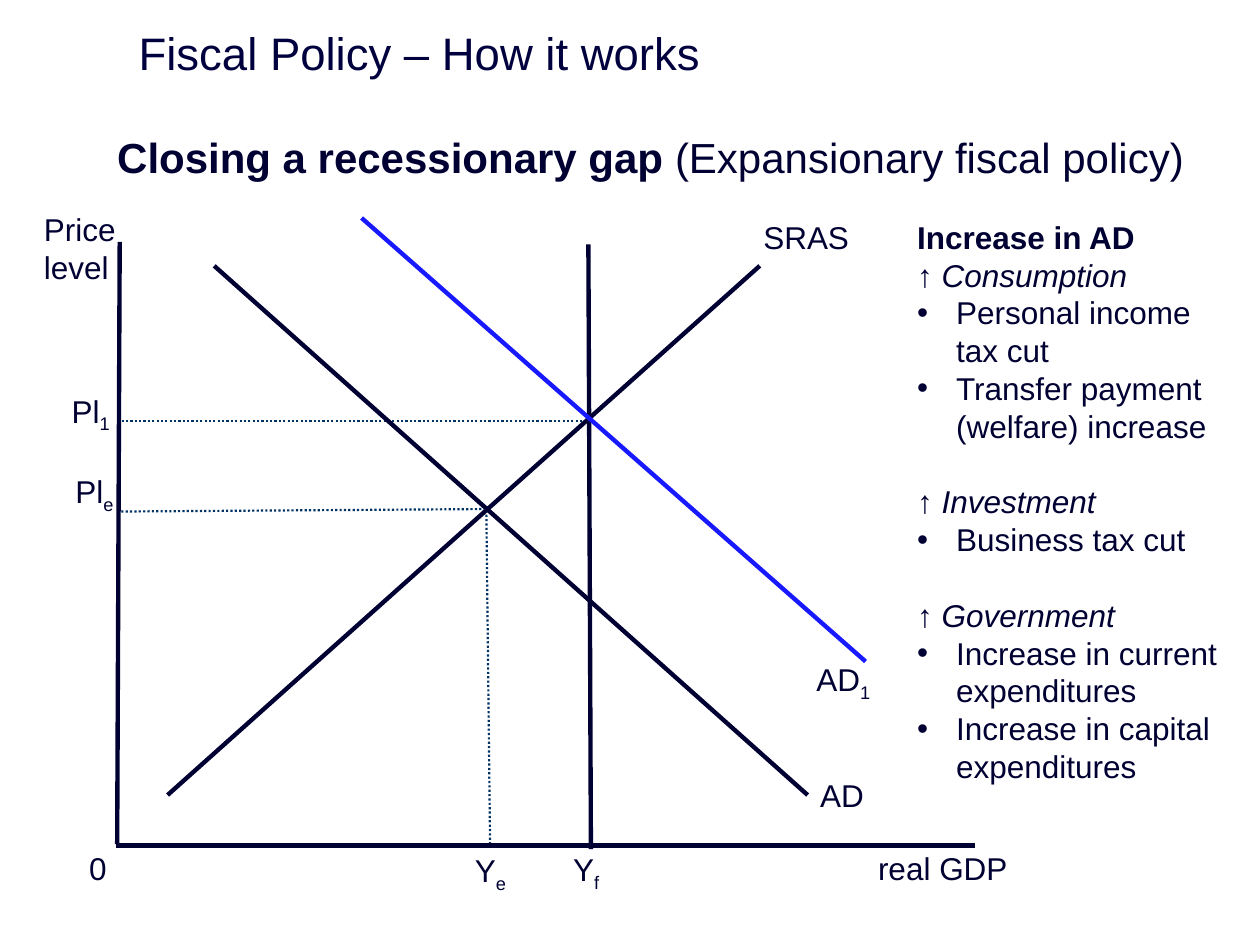
from pptx import Presentation
from pptx.dml.color import RGBColor
from pptx.enum.dml import MSO_LINE
from pptx.enum.shapes import MSO_CONNECTOR
from pptx.enum.text import MSO_ANCHOR, MSO_AUTO_SIZE, PP_ALIGN
from pptx.oxml.ns import qn
from pptx.util import Inches, Pt
from lxml import etree

STRAIGHT = MSO_CONNECTOR.STRAIGHT
DOT = MSO_LINE.ROUND_DOT
LEFT = PP_ALIGN.LEFT
TOP, MIDDLE = MSO_ANCHOR.TOP, MSO_ANCHOR.MIDDLE
FIXED, GROW = MSO_AUTO_SIZE.NONE, MSO_AUTO_SIZE.SHAPE_TO_FIT_TEXT

INK, TITLE_INK, GUIDE, SHIFT = "000032", "00003E", "003264", "1919FF"
LINE_PITCH = 1.2
LABEL_SIZE = 18

CURVES = [
    ((0.95, 1.92), (0.93, 6.7), INK),
    ((7.74, 6.71), (0.92, 6.71), INK),
    ((6.03, 2.11), (1.33, 6.31), INK),
    ((1.7, 2.11), (6.41, 6.31), INK),
    ((4.67, 1.94), (4.69, 6.74), INK),
    ((2.87, 1.73), (6.87, 5.25), SHIFT),
]
GUIDES = [
    ((3.89, 4.04), (0.95, 4.06)),
    ((3.86, 4.05), (3.89, 6.72)),
    ((4.69, 3.34), (0.96, 3.34)),
]
LABELS = [
    ("real GDP", "", (6.87, 6.69, 1.29, 0.4)),
    ("0", "", (0.61, 6.69, 0.64, 0.4)),
    ("SRAS", "", (5.96, 1.68, 0.9, 0.4)),
    ("AD", "", (6.41, 6.11, 0.81, 0.4)),
    ("AD", "1", (6.38, 5.23, 0.81, 0.4)),
    ("Pl", "1", (0.47, 3.1, 0.75, 0.4)),
    ("Pl", "e", (0.5, 3.74, 0.75, 0.4)),
    ("Y", "e", (3.67, 6.75, 0.55, 0.4)),
    ("Y", "f", (4.45, 6.74, 0.44, 0.4)),
]
MEASURES = [
    ("Consumption", ["Personal income tax cut", "Transfer payment (welfare) increase"]),
    ("Investment", ["Business tax cut"]),
    ("Government", ["Increase in current expenditures", "Increase in capital expenditures"]),
]


def rgb(value):
    """Turn a hex string into a colour."""
    return RGBColor.from_string(value)


def set_all(target, values):
    """Set every attribute named in a dict."""
    for name, value in values.items():
        setattr(target, name, value)


def add_run(p, text, size=LABEL_SIZE, color=INK, subscript=False, **style):
    """Append a formatted run to a paragraph."""
    r = p.add_run()
    r.text = text
    set_all(r.font, {"name": "Arial", "size": Pt(size), "bold": False, "italic": False, **style})
    r.font.color.rgb = rgb(color)
    if subscript:
        r.font._element.set("baseline", "-25000")


def format_paragraph(p, size=LABEL_SIZE, before=0, indent=0, bullet=None):
    """Set the spacing, hanging indent and bullet of a paragraph."""
    set_all(p, {"alignment": LEFT, "line_spacing": Pt(size * LINE_PITCH),
                "space_before": Pt(before), "space_after": Pt(0)})
    pPr = p._p.get_or_add_pPr()
    pPr.set("marL", str(Inches(indent)))
    pPr.set("indent", str(-Inches(indent)))
    if bullet:
        etree.SubElement(pPr, qn("a:buFont")).set("typeface", "Arial")
        etree.SubElement(pPr, qn("a:buChar")).set("char", bullet)
    else:
        etree.SubElement(pPr, qn("a:buNone"))


def next_paragraph(tf, **layout):
    """Return the empty first paragraph or a new one, formatted."""
    first = tf.paragraphs[0]
    p = tf.add_paragraph() if first.runs else first
    format_paragraph(p, **layout)
    return p


def place_placeholder(sp, box, anchor):
    """Move a placeholder and return its text frame."""
    set_all(sp, dict(zip(("left", "top", "width", "height"), map(Inches, box))))
    tf = sp.text_frame
    set_all(tf, {"word_wrap": True, "auto_size": FIXED, "vertical_anchor": anchor})
    return tf


def add_text_box(s, box):
    """Add a wrapping text box and return its text frame."""
    tf = s.shapes.add_textbox(*map(Inches, box)).text_frame
    set_all(tf, {"word_wrap": True, "auto_size": GROW})
    return tf


def add_label(s, text, subscript, box):
    """Add a diagram label with an optional subscript."""
    p = next_paragraph(add_text_box(s, box))
    add_run(p, text)
    if subscript:
        add_run(p, subscript, subscript=True)


def add_line(s, start, end, color, width=2.5, dash=None):
    """Add a straight line between two points."""
    sp = s.shapes.add_connector(STRAIGHT, *map(Inches, start + end))
    sp.line.color.rgb = rgb(color)
    set_all(sp.line, {"width": Pt(width), "dash_style": dash})
    etree.SubElement(sp._element.spPr, qn("a:effectLst"))


def add_measures(s, box):
    """Add the list of measures that raise demand."""
    tf = add_text_box(s, box)
    add_run(next_paragraph(tf), "Increase in AD", bold=True)
    for i, (component, items) in enumerate(MEASURES):
        p = next_paragraph(tf, before=LABEL_SIZE * LINE_PITCH if i else 0)
        add_run(p, "↑ ")
        add_run(p, component, italic=True)
        for item in items:
            add_run(next_paragraph(tf, indent=0.31, bullet="•"), item)


def main():
    """Build and save the slide."""
    prs = Presentation()
    set_all(prs, {"slide_width": Inches(10), "slide_height": Inches(7.5)})
    s = prs.slides.add_slide(prs.slide_layouts[1])

    tf = place_placeholder(s.shapes.title, (1, 0.16, 9, 0.51), MIDDLE)
    add_run(next_paragraph(tf, size=26), "Fiscal Policy – How it works", 26, TITLE_INK)

    tf = place_placeholder(s.placeholders[1], (0.83, 0.99, 8.83, 4.95), TOP)
    p = next_paragraph(tf, size=24, indent=0.38)
    add_run(p, "Closing a recessionary gap ", 24, bold=True)
    add_run(p, "(Expansionary fiscal policy)", 24)

    for start, end in GUIDES:
        add_line(s, start, end, GUIDE, 1.25, DOT)
    for start, end, color in CURVES:
        add_line(s, start, end, color)
    for text, subscript, box in LABELS:
        add_label(s, text, subscript, box)

    tf = add_text_box(s, (0.25, 1.62, 0.88, 0.71))
    for word in ("Price", "level"):
        add_run(next_paragraph(tf), word)
    add_measures(s, (7.18, 1.68, 2.58, 4.95))

    prs.save("out.pptx")


if __name__ == "__main__":
    main()
